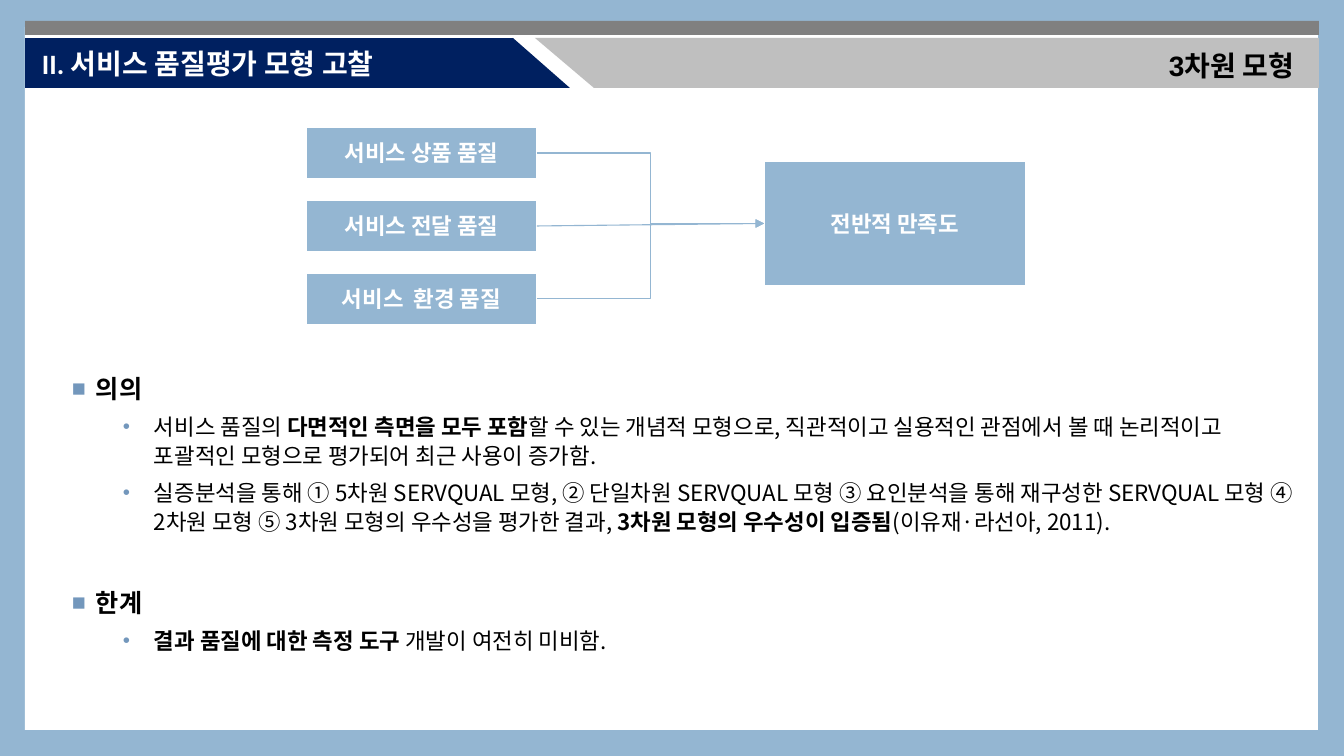
"""Builds a slide on the three-dimensional service quality model."""
from dataclasses import dataclass

from lxml.etree import SubElement
from pptx import Presentation
from pptx.dml.color import RGBColor
from pptx.enum.shapes import MSO_CONNECTOR as Link, MSO_SHAPE as Shape
from pptx.enum.text import MSO_ANCHOR as Anchor, MSO_AUTO_SIZE as AutoSize, PP_ALIGN as Align
from pptx.oxml.ns import qn
from pptx.util import Pt

SCALE = 12192000 / 1344


def px(count):
    return round(count * SCALE)


@dataclass(frozen=True)
class Theme:
    sky: str = "94B6D2"
    navy: str = "002060"
    dark: str = "808080"
    silver: str = "BFBFBF"
    white: str = "FFFFFF"
    black: str = "000000"
    bullet: str = "7397BC"
    heading_size: int = 20
    topic_size: int = 18
    text_size: int = 16
    latin: str = "Calibri"
    label: str = "Arial"
    korean: str = "Noto Sans CJK KR"


class SlideBuilder:
    """Draws elements on one slide in one theme."""

    def __init__(self, page, theme):
        self.page = page
        self.theme = theme
        self.paint(page.background, theme.sky)

    def paint(self, item, color):
        item.fill.solid()
        item.fill.fore_color.rgb = RGBColor.from_string(color)

    def style(self, para, name, size, color, bold=None):
        font = para.font
        font.name, font.size, font.bold = name, Pt(size), bold
        font.color.rgb = RGBColor.from_string(color)
        defaults = para._p.pPr.find(qn("a:defRPr"))
        defaults.set("kern", "0")
        SubElement(defaults, qn("a:ea"), typeface=self.theme.korean)

    def place(self, item, left, top, width, height):
        item.left, item.top = px(left), px(top)
        item.width, item.height = px(width), px(height)
        item.element.getparent().append(item.element)

    def block(self, area, color, kind=Shape.RECTANGLE, turn=0):
        block = self.page.shapes.add_shape(kind, *map(px, area))
        block.shadow.inherit = False
        block.rotation = turn
        self.paint(block, color)
        block.line.fill.background()
        return block

    def box(self, area, text):
        theme = self.theme
        box = self.block(area, theme.sky)
        box.line.color.rgb = RGBColor.from_string(theme.white)
        box.line.width = Pt(1.5)
        box.text_frame.vertical_anchor = Anchor.MIDDLE
        para = box.text_frame.paragraphs[0]
        para.text = text
        para.alignment = Align.CENTER
        self.style(para, theme.latin, theme.text_size, theme.white, True)
        return box

    def arrow(self, source, target, kind):
        arrow = self.page.shapes.add_connector(kind, 0, 0, 0, 0)
        arrow.begin_connect(source, 3)
        arrow.end_connect(target, 1)
        arrow.line.color.rgb = RGBColor.from_string(self.theme.sky)
        arrow.line.width = Pt(0.79)
        SubElement(arrow.line._get_or_add_ln(), qn("a:tailEnd"), type="triangle")
        SubElement(arrow.element.spPr, qn("a:effectLst"))

    def title(self, area, text):
        theme = self.theme
        title = self.page.shapes.title
        self.place(title, *area)
        self.paint(title, theme.navy)
        frame = title.text_frame
        frame.auto_size = AutoSize.NONE
        frame.vertical_anchor = Anchor.MIDDLE
        frame.margin_left = px(17)
        para = frame.paragraphs[0]
        para.text = text
        para.alignment = Align.LEFT
        self.style(para, theme.latin, theme.heading_size, theme.white, True)

    def label(self, area, text):
        theme = self.theme
        label = self.page.shapes.add_textbox(*map(px, area))
        para = label.text_frame.paragraphs[0]
        para.text = text
        self.style(para, theme.label, theme.heading_size, theme.black, True)

    def bullet(self, para, sign, margin, hang):
        props = para._p.get_or_add_pPr()
        props.set("marL", str(px(margin)))
        props.set("indent", str(-px(hang)))
        color = SubElement(props, qn("a:buClr"))
        SubElement(color, qn("a:srgbClr"), val=self.theme.bullet)
        SubElement(props, qn("a:buSzPct"), val="92000")
        SubElement(props, qn("a:buFont"), typeface=self.theme.label)
        SubElement(props, qn("a:buChar"), char=sign)

    def topics(self, area, topics):
        theme = self.theme
        body = self.page.placeholders[1]
        self.place(body, *area)
        frame = body.text_frame
        frame.auto_size = AutoSize.NONE
        frame.vertical_anchor = Anchor.TOP
        frame.margin_left = px(10)
        frame.margin_top = frame.margin_right = frame.margin_bottom = px(4)
        lines = []
        for topic, points in topics:
            lines.append((0, [(topic, True)]))
            lines += [(1, spans) for spans in points]
        for index, (level, spans) in enumerate(lines):
            para = frame.add_paragraph() if index else frame.paragraphs[0]
            para.level = level
            self.bullet(para, *(("•", 82, 31) if level else ("■", 24, 24)))
            para.line_spacing = 1.1
            para.space_before = Pt(35 if index and not level else 5)
            size = theme.text_size if level else theme.topic_size
            self.style(para, theme.korean, size, theme.black)
            for text, bold in spans:
                span = para.add_run()
                span.text = text
                span.font.bold = bold


TOPICS = [
    ("의의", [
        [("서비스 품질의 ", False),
         ("다면적인 측면을 모두 포함", True),
         ("할 수 있는 개념적 모형으로, 직관적이고 실용적인 관점에서 볼 때 논리적이고 "
          "포괄적인 모형으로 평가되어 최근 사용이 증가함.", False)],
        [("실증분석을 통해 ① 5차원 SERVQUAL 모형, ② 단일차원 SERVQUAL 모형 "
          "③ 요인분석을 통해 재구성한 SERVQUAL 모형 ④ 2차원 모형 "
          "⑤ 3차원 모형의 우수성을 평가한 결과,", False),
         (" 3차원 모형의 우수성이 입증됨", True),
         ("(이유재·라선아, 2011).", False)],
    ]),
    ("한계", [
        [("결과 품질에 대한 측정 도구 ", True), ("개발이 여전히 미비함.", False)],
    ]),
]
QUALITIES = [
    ("서비스 상품 품질", Link.ELBOW),
    ("서비스 전달 품질", Link.STRAIGHT),
    ("서비스  환경 품질", Link.ELBOW),
]


def main():
    deck = Presentation()
    deck.slide_width, deck.slide_height = px(1344), px(756)
    theme = Theme()
    slide = SlideBuilder(deck.slides.add_slide(deck.slide_layouts[1]), theme)

    slide.block((25, 27, 1293, 703), theme.white)
    slide.block((25, 21, 1294, 14), theme.dark)
    slide.block((594, 38, 725, 50), theme.silver)
    slide.block((535, 38, 59, 50), theme.silver, Shape.RIGHT_TRIANGLE, 180)
    slide.title((25, 38, 488, 50), "II. 서비스 품질평가 모형 고찰")
    slide.block((513, 38, 57, 50), theme.navy, Shape.RIGHT_TRIANGLE)
    slide.label((1159, 44, 160, 44), "3차원 모형")

    satisfaction = slide.box((764, 161, 262, 125), "전반적 만족도")
    for row, (quality, link) in enumerate(QUALITIES):
        box = slide.box((306, 127 + 73 * row, 231, 52), quality)
        slide.arrow(box, satisfaction, link)

    slide.topics((62, 366, 1242, 295), TOPICS)
    deck.save("out.pptx")


if __name__ == "__main__":
    main()
